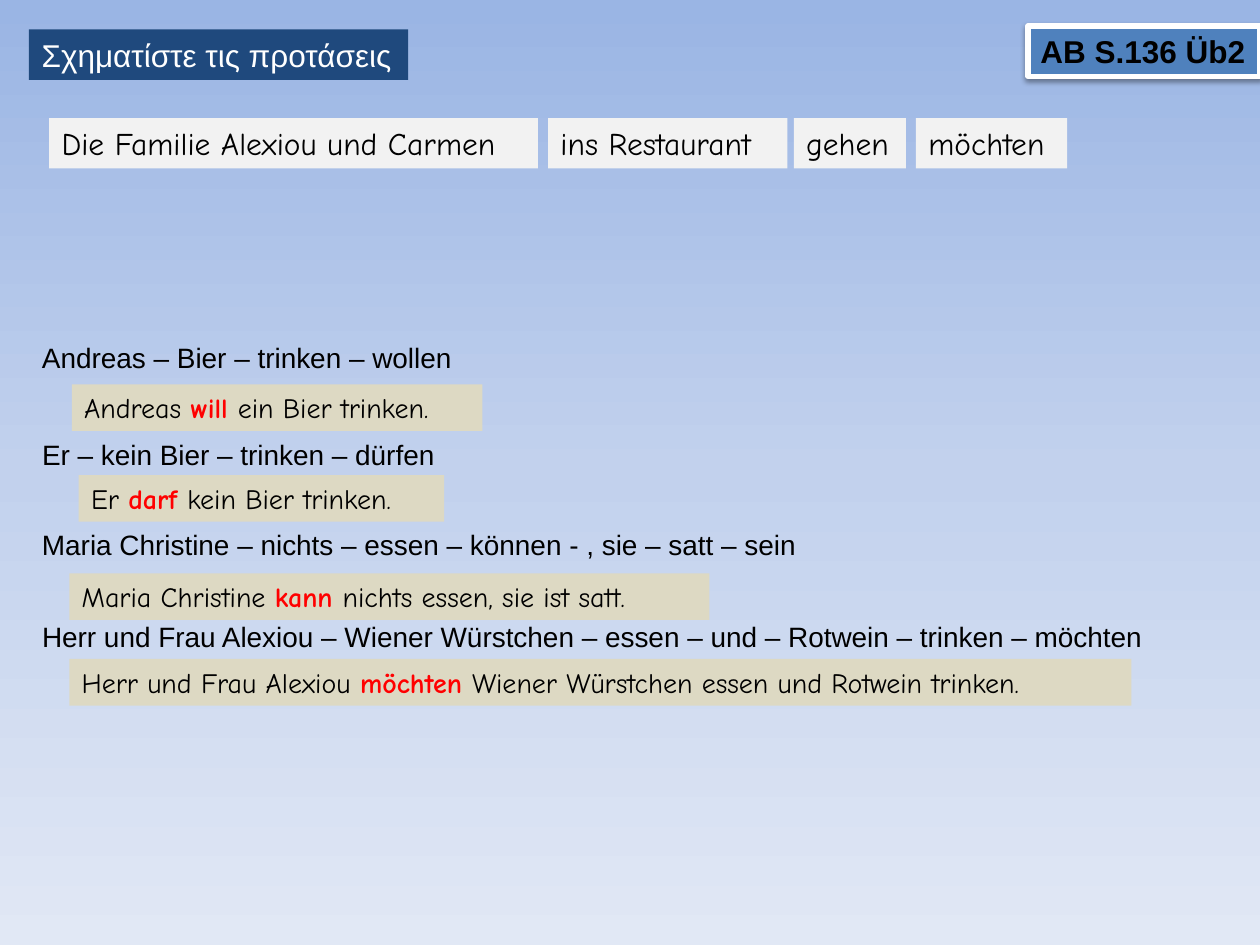
"""Build a German modal-verb exercise slide with word cards, prompts and answers."""
from copy import deepcopy

from lxml.etree import SubElement
from pptx import Presentation
from pptx.dml.color import RGBColor
from pptx.enum.shapes import MSO_SHAPE
from pptx.enum.text import MSO_ANCHOR, MSO_AUTO_SIZE, PP_ALIGN
from pptx.oxml.ns import qn
from pptx.util import Inches, Pt

COLORS = {
    "sky_top": "9AB5E4", "sky_middle": "C2D1ED", "sky_bottom": "E1E8F5",
    "navy": "1F497D", "blue": "4F81BD", "card": "F2F2F2", "answer": "DDD9C3",
    "white": "FFFFFF", "black": "000000", "red": "FF0000",
}


def color(name):
    return RGBColor.from_string(COLORS[name])


def write(box, text, left, top, width, height, fill=None, font="Arial", size=18,
          ink="black", bold=False, keyword=None, fit=MSO_AUTO_SIZE.SHAPE_TO_FIT_TEXT):
    """Place a box by percentages of the slide and write its text, keyword in bold red."""
    box.left, box.width = int(left * column), int(width * column)
    box.top, box.height = int(top * row), int(height * row)
    if fill:
        box.fill.solid()
        box.fill.fore_color.rgb = color(fill)
        box.line.fill.background()
        box.shadow.inherit = False
    frame = box.text_frame
    frame.word_wrap = False
    frame.auto_size = fit
    frame.vertical_anchor = MSO_ANCHOR.TOP
    para = frame.paragraphs[0]
    para.alignment = PP_ALIGN.LEFT
    before, match, after = text.partition(keyword) if keyword else (text, "", "")
    for words, tint, strong in ((before, ink, bold), (match, "red", True), (after, ink, bold)):
        if words:
            span = para.add_run()
            span.text = words
            span.font.name, span.font.size = font, Pt(size)
            span.font.bold = strong
            span.font.color.rgb = color(tint)


deck = Presentation()
deck.slide_width, deck.slide_height = Inches(10), Inches(7.5)
column, row = deck.slide_width / 100, deck.slide_height / 100
page = deck.slides.add_slide(deck.slide_layouts[5])
shapes = page.shapes

backdrop = page.background.fill
backdrop.gradient()
backdrop.gradient_angle = 270
first_stop = page.element.xpath(".//p:bg//a:gs")[0]
first_stop.addnext(deepcopy(first_stop))
sky = ((0, "sky_top"), (0.5, "sky_middle"), (1, "sky_bottom"))
for stop, (position, name) in zip(backdrop.gradient_stops, sky):
    stop.position = position
    stop.color.rgb = color(name)

CARD_HEIGHT, LINE_HEIGHT = 5.33, 4.93

write(shapes.title, "Σχηματίστε τις προτάσεις", 2.3, 3.12, 30.1, CARD_HEIGHT,
      fill="navy", ink="white", fit=MSO_AUTO_SIZE.NONE)

badge = shapes.add_shape(MSO_SHAPE.RECTANGLE, 0, 0, 0, 0)
write(badge, "AB S.136 Üb2", 81.6, 2.75, 18.4, CARD_HEIGHT, fill="blue", bold=True)
badge.line.color.rgb = color("white")
badge.line.width = Pt(3)
effects = badge.element.spPr.find(qn("a:effectLst"))
shadow = SubElement(effects, qn("a:outerShdw"), blurRad="40000", dist="20000",
                    dir="5400000", rotWithShape="0")
shade = SubElement(shadow, qn("a:srgbClr"), val=COLORS["black"])
SubElement(shade, qn("a:alpha"), val="38000")

cards = (
    ("Die Familie Alexiou und Carmen", 3.9, 38.8),
    ("ins Restaurant", 43.5, 19),
    ("gehen", 63, 8.9),
    ("möchten", 72.7, 12),
)
for text, left, width in cards:
    card = shapes.add_shape(MSO_SHAPE.RECTANGLE, 0, 0, 0, 0)
    write(card, text, left, 12.5, width, CARD_HEIGHT, fill="card", font="Comic Neue")

prompts = (
    ("Andreas – Bier – trinken – wollen", 35.4, 35.6),
    ("Er – kein Bier – trinken – dürfen", 45.6, 34.2),
    ("Maria Christine – nichts – essen – können - , sie – satt – sein", 55.2, 63.3),
    ("Herr und Frau Alexiou – Wiener Würstchen – essen – und – Rotwein – trinken – möchten",
     64.85, 91.1),
)
for text, top, width in prompts:
    prompt = shapes.add_textbox(0, 0, 0, 0)
    write(prompt, text, 2.35, top, width, LINE_HEIGHT, size=16)

answers = (
    ("Andreas will ein Bier trinken.", "will ", 5.7, 40.67, 32.6),
    ("Er darf kein Bier trinken.", "darf ", 6.25, 50.27, 29),
    ("Maria Christine kann nichts essen, sie ist satt.", "kann ", 5.5, 60.67, 50.8),
    ("Herr und Frau Alexiou möchten Wiener Würstchen essen und Rotwein trinken.",
     "möchten ", 5.5, 69.73, 84.3),
)
for text, verb, left, top, width in answers:
    answer = shapes.add_shape(MSO_SHAPE.RECTANGLE, 0, 0, 0, 0)
    write(answer, text, left, top, width, LINE_HEIGHT, fill="answer",
          font="Comic Neue", size=16, keyword=verb)

deck.save("out.pptx")
